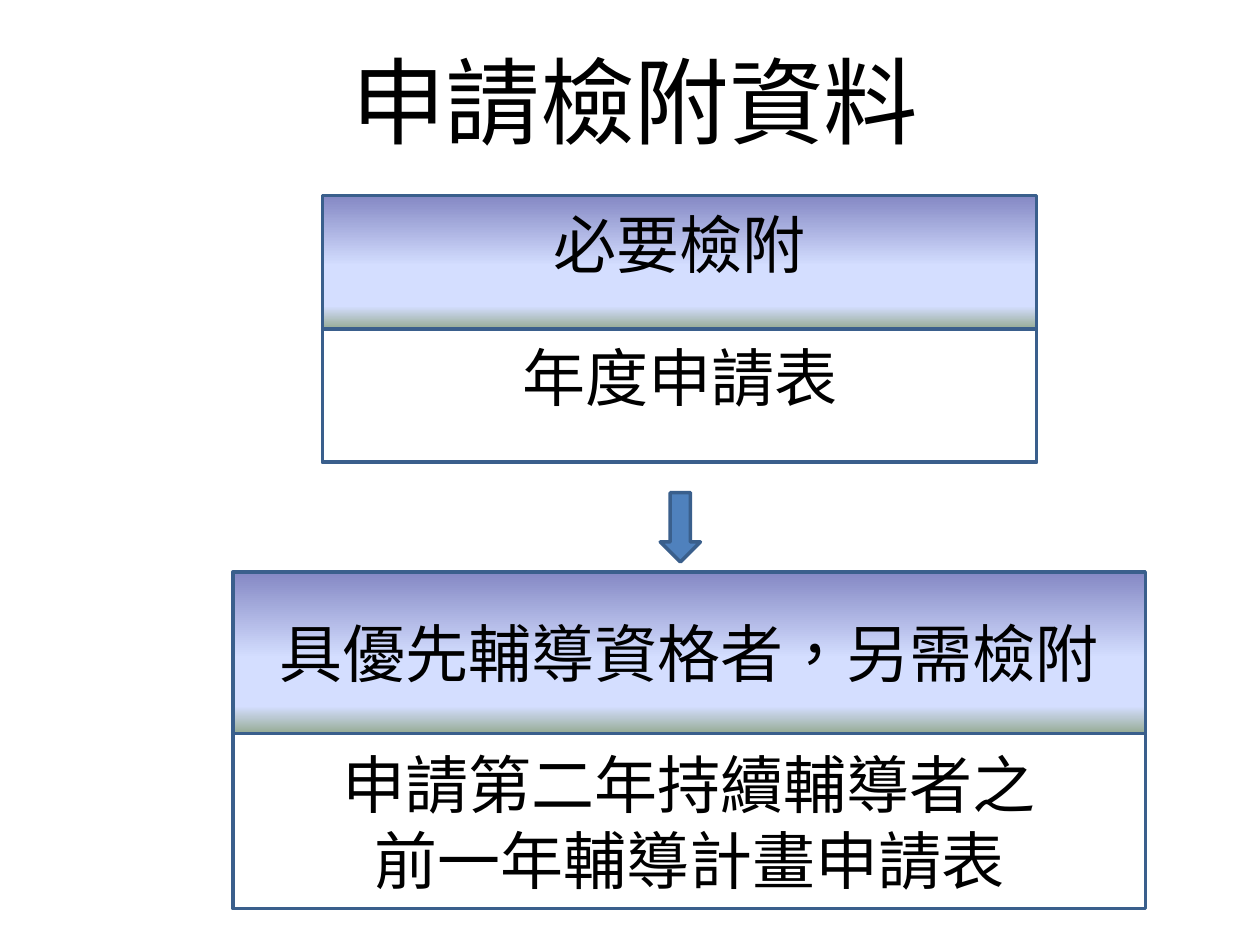
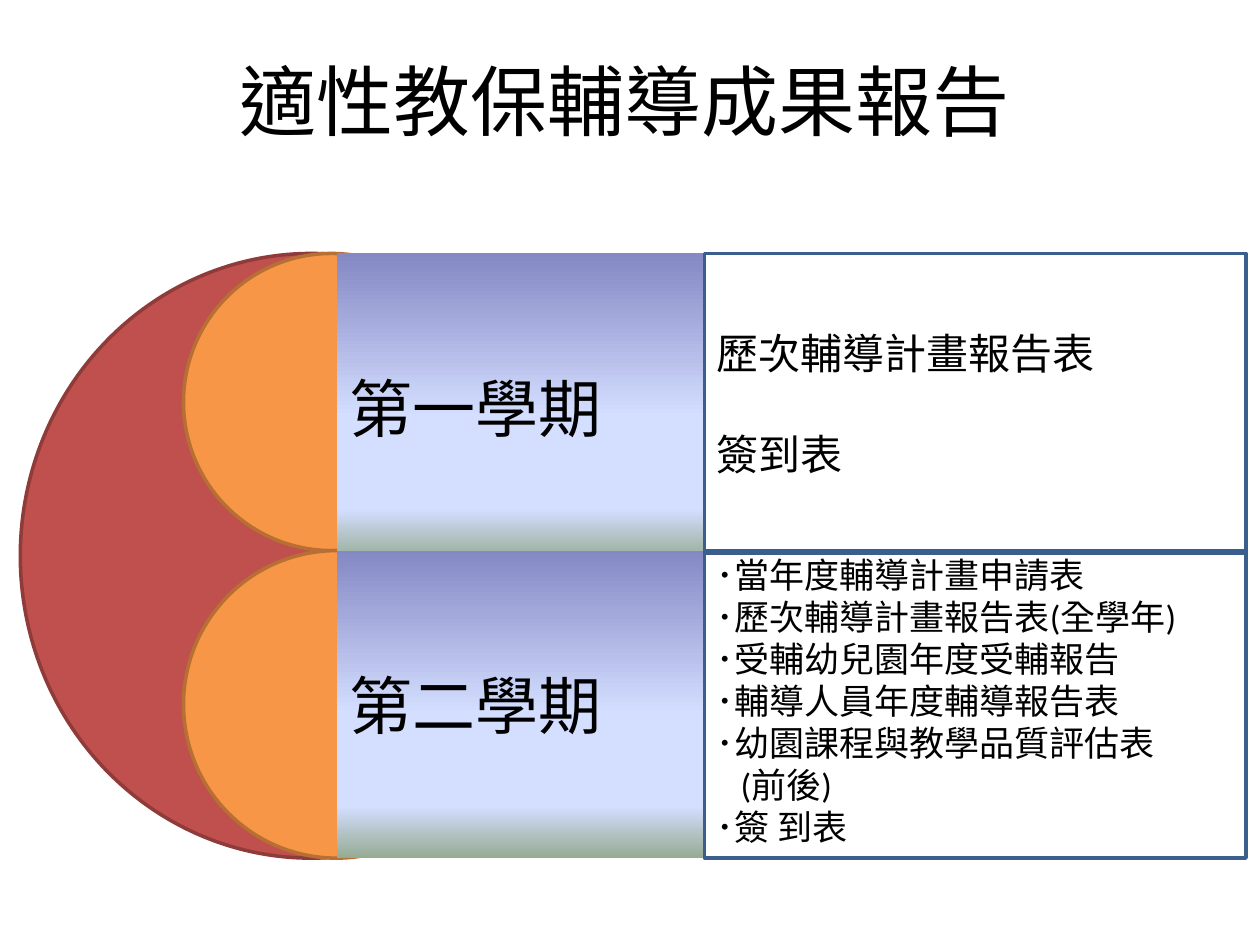
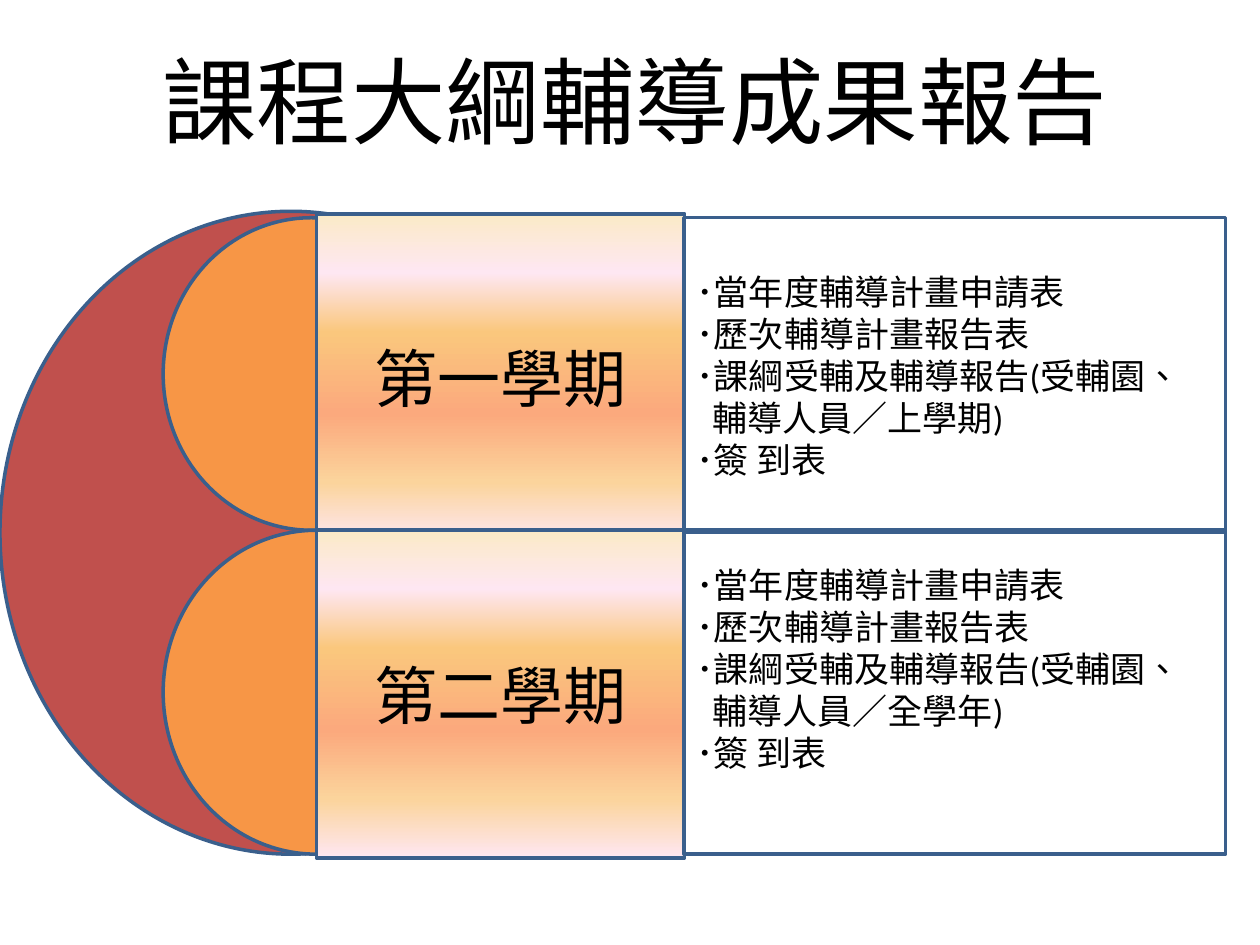
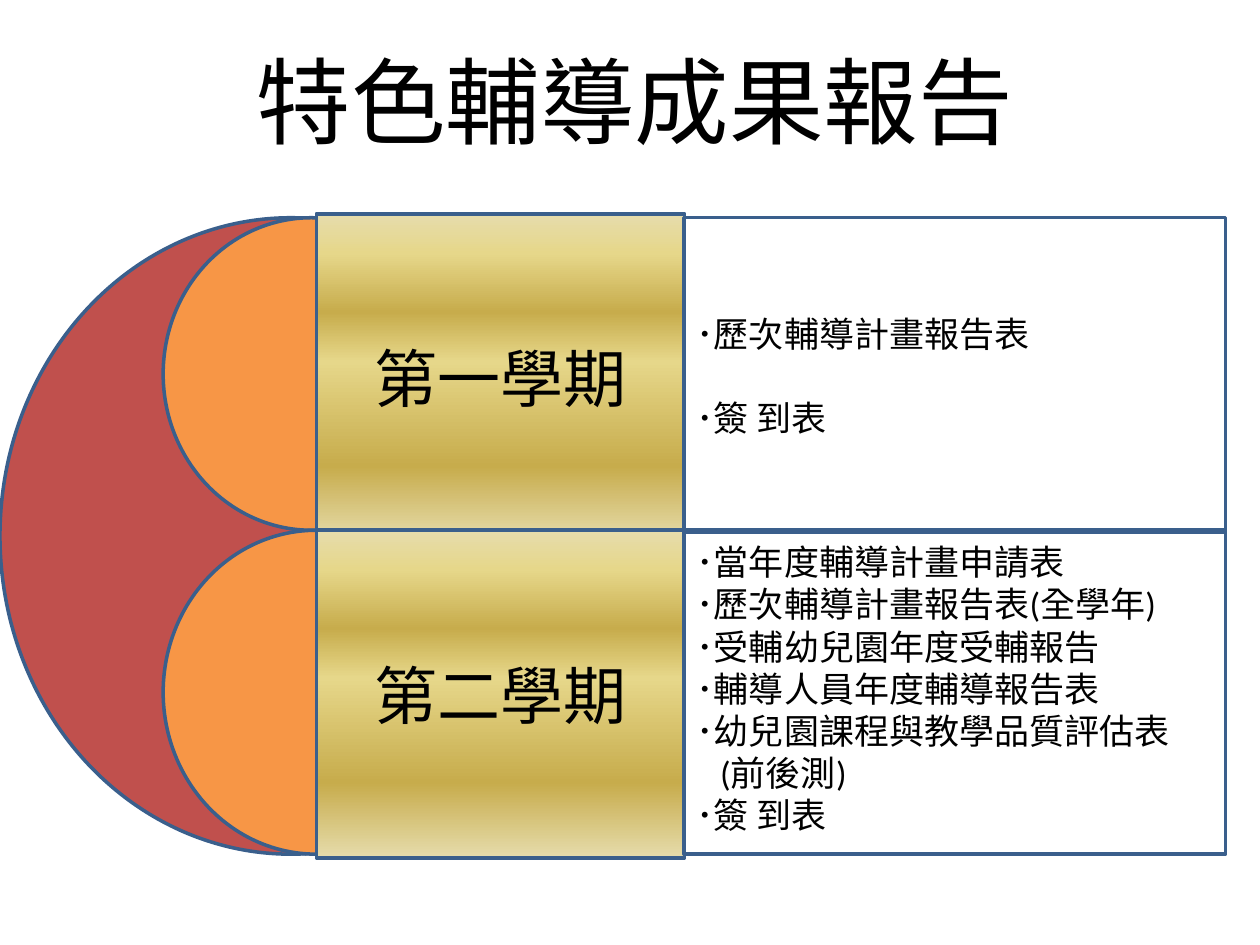
from lxml import etree
from pptx import Presentation
from pptx import util as u
from pptx.dml import color
from pptx.enum import lang, shapes, text
from pptx.oxml import ns

BODY_FONT, TITLE_FONT, CJK_FONT = "Calibri", "Noto Sans CJK SC", "Noto Sans CJK TC"
BLACK, BLUE, EDGE = "000000", "4F81BD", "3A5F8C"
RED, RED_EDGE, ORANGE, ORANGE_EDGE = "C0504D", "8E3B39", "F79646", "B76F34"

# Vertical gradients: position in percent, colour
DAYBREAK = [(0, "8488C4"), (53, "D4DEFF"), (83, "D4DEFF"), (100, "96AB94")]
PEACH = [(0, "FBEAC7"), (18, "FEE7F2"), (36, "FAC77D"),
         (61, "FBA97D"), (82, "FBD49C"), (100, "FEE7F2")]
GOLD = [(0, "E6DCAC"), (12, "E6D78A"), (30, "C7AC4C"),
        (45, "E6D78A"), (77, "C7AC4C"), (100, "E6DCAC")]

RECTANGLE = shapes.MSO_SHAPE.RECTANGLE
OVAL = shapes.MSO_SHAPE.OVAL
LEFT, CENTER = text.PP_ALIGN.LEFT, text.PP_ALIGN.CENTER


def rgb(hex_string):
    return color.RGBColor.from_string(hex_string)


def cm_box(box):
    return [u.Cm(length) for length in box]


def fill_gradient(shape, stops):
    shape.fill.gradient()
    shape.fill.gradient_angle = 270
    stop_list = shape.element.find(".//" + ns.qn("a:gsLst"))
    for stop in list(stop_list):
        stop_list.remove(stop)
    for position, hex_string in stops:
        stop = etree.SubElement(stop_list, ns.qn("a:gs"), pos=str(position * 1000))
        etree.SubElement(stop, ns.qn("a:srgbClr"), val=hex_string)


def add_block(parent, kind, box, fill=None, edge=EDGE):
    """Preset shape; fill is a colour, a list of gradient stops or None."""
    shape = parent.shapes.add_shape(kind, *cm_box(box))
    shape.shadow.inherit = False
    if fill is None:
        shape.fill.background()
    elif isinstance(fill, list):
        fill_gradient(shape, fill)
    else:
        shape.fill.solid()
        shape.fill.fore_color.rgb = rgb(fill)
    if edge:
        shape.line.color.rgb = rgb(edge)
        shape.line.width = u.Pt(2)
    else:
        shape.line.fill.background()
    return shape


def write(shape, lines, size, font=BODY_FONT, align=CENTER, top=0.13, bottom=0.13):
    """Each line is a string or a dict with runs, indent (cm) and before (pt)."""
    frame = shape.text_frame
    frame.word_wrap = True
    frame.vertical_anchor = text.MSO_ANCHOR.MIDDLE
    frame.margin_left = frame.margin_right = u.Cm(0.25)
    frame.margin_top, frame.margin_bottom = u.Cm(top), u.Cm(bottom)
    for index, line in enumerate(lines):
        if isinstance(line, str):
            line = {"runs": [(line, font)]}
        paragraph = frame.paragraphs[0] if index == 0 else frame.add_paragraph()
        paragraph.alignment = align
        if "before" in line:
            paragraph.space_before = u.Pt(line["before"])
        if "indent" in line:
            properties = paragraph._p.get_or_add_pPr()
            properties.set("marL", str(u.Cm(line["indent"])))
            properties.set("indent", "0")
        for words, run_font in line["runs"]:
            run = paragraph.add_run()
            run.text = words
            run.font.name = run_font
            run.font.size = u.Pt(size)
            run.font.color.rgb = rgb(BLACK)
            run.font.language_id = lang.MSO_LANGUAGE_ID.TRADITIONAL_CHINESE


def add_title(slide, words, left=1.9, size=54, font=TITLE_FONT):
    title = slide.shapes.add_textbox(*cm_box((left, 0.91, 21.79, 2.21)))
    write(title, [words], size, font)


def add_card(slide, box, head_height, heading, lines, head_bottom=0.13, body_bottom=0.13):
    """Gradient heading on top of an outlined body."""
    left, top, width, height = box
    card = slide.shapes.add_group_shape()
    head = add_block(card, RECTANGLE, (left, top, width, head_height), DAYBREAK)
    write(head, [heading], 36, bottom=head_bottom)
    body = add_block(card, RECTANGLE,
                     (left, top + head_height, width, height - head_height))
    write(body, lines, 36, bottom=body_bottom)


def add_semesters(slide, origin, heights, gradient, panels, rise=0, overhang=0.08,
                  round_edges=(EDGE, EDGE), label_edge=EDGE, label_align=CENTER):
    """Nested half circles, two semester labels and their document panels."""
    left, top = origin
    first, second = heights
    tops = (top, top + first)
    diagram = slide.shapes.add_group_shape()

    # Half circles, whose right parts lie under the labels
    red_edge, orange_edge = round_edges
    add_block(diagram, OVAL, (left, top - rise, 11.73, first + second + rise),
              RED, red_edge)
    for row_top, width, height in zip(tops, (5.97, 6.17), heights):
        add_block(diagram, OVAL, (left + 3.29, row_top, width, height),
                  ORANGE, orange_edge)

    # Semester labels
    label_tops = (top - overhang, top + first)
    for row_top, words in zip(label_tops, ("第一學期", "第二學期")):
        label = add_block(diagram, RECTANGLE,
                          (left + 6.38, row_top, 7.42, second + overhang),
                          gradient, label_edge)
        write(label, [words], 36, align=label_align)

    # Document panels
    for row_top, height, panel in zip(tops, (first + 0.05, second), panels):
        block = add_block(diagram, RECTANGLE, (left + 13.79, row_top, 10.92, height))
        write(block, align=LEFT, **panel)


def marked(words):
    return {"runs": [("･", CJK_FONT), (words, BODY_FONT)]}


def syllabus_lines(period):
    return ["･當年度輔導計畫申請表", "･歷次輔導計畫報告表",
            "･課綱受輔及輔導報告(受輔園、",
            {"indent": 0.32, "runs": [("輔導人員", BODY_FONT),
                                      ("／" + period, CJK_FONT), (")", BODY_FONT)]},
            "･簽 到表"]


def year_end_panel(assessment, stage):
    lines = ["･當年度輔導計畫申請表", marked("歷次輔導計畫報告表(全學年)"),
             marked("受輔幼兒園年度受輔報告"), marked("輔導人員年度輔導報告表"),
             marked(assessment),
             {"indent": 0.48, "runs": [(stage, BODY_FONT)]}, marked("簽 到表")]
    return {"lines": lines, "size": 20, "top": 0, "bottom": 0.17}


def spaced_line(words, before):
    return {"before": before, "runs": [(words, BODY_FONT)]}


def build_application(slide):
    add_title(slide, "申請檢附資料")
    add_card(slide, (6.5, 3.94, 14.4, 5.38), 2.69, "必要檢附", ["年度申請表"],
             head_bottom=0.9, body_bottom=0.9)
    add_card(slide, (4.7, 11.53, 18.39, 6.79), 3.26, "具優先輔導資格者，另需檢附",
             ["申請第二年持續輔導者之", "前一年輔導計畫申請表"])
    add_block(slide, shapes.MSO_SHAPE.DOWN_ARROW, (13.31, 9.93, 0.81, 1.4), BLUE)


def build_adaptive_care(slide):
    add_title(slide, "適性教保輔導成果報告", left=1.7, size=44, font=BODY_FONT)
    first = {"lines": ["歷次輔導計畫報告表", spaced_line("簽到表", 29)], "size": 24}
    add_semesters(slide, (0.41, 5.11), (5.99, 6.2), DAYBREAK,
                  [first, year_end_panel("幼園課程與教學品質評估表", "(前後)")],
                  overhang=0, round_edges=(RED_EDGE, ORANGE_EDGE),
                  label_edge=None, label_align=LEFT)


def build_syllabus(slide):
    add_title(slide, "課程大綱輔導成果報告")
    panels = [{"lines": syllabus_lines("上學期"), "size": 20},
              {"lines": syllabus_lines("全學年"), "size": 20, "bottom": 1.07}]
    add_semesters(slide, (0, 4.39), (6.3, 6.53), PEACH, panels, rise=0.13)


def build_feature(slide):
    add_title(slide, "特色輔導成果報告")
    first = {"lines": ["･歷次輔導計畫報告表", spaced_line("･簽 到表", 24)], "size": 20}
    add_semesters(slide, (0, 4.39), (6.3, 6.53), GOLD,
                  [first, year_end_panel("幼兒園課程與教學品質評估表", "(前後測)")])


def main():
    presentation = Presentation()
    presentation.slide_width, presentation.slide_height = u.Cm(25.4), u.Cm(19.05)
    blank = presentation.slide_layouts[6]
    for build in (build_application, build_adaptive_care, build_syllabus, build_feature):
        build(presentation.slides.add_slide(blank))
    presentation.save("out.pptx")


if __name__ == "__main__":
    main()
